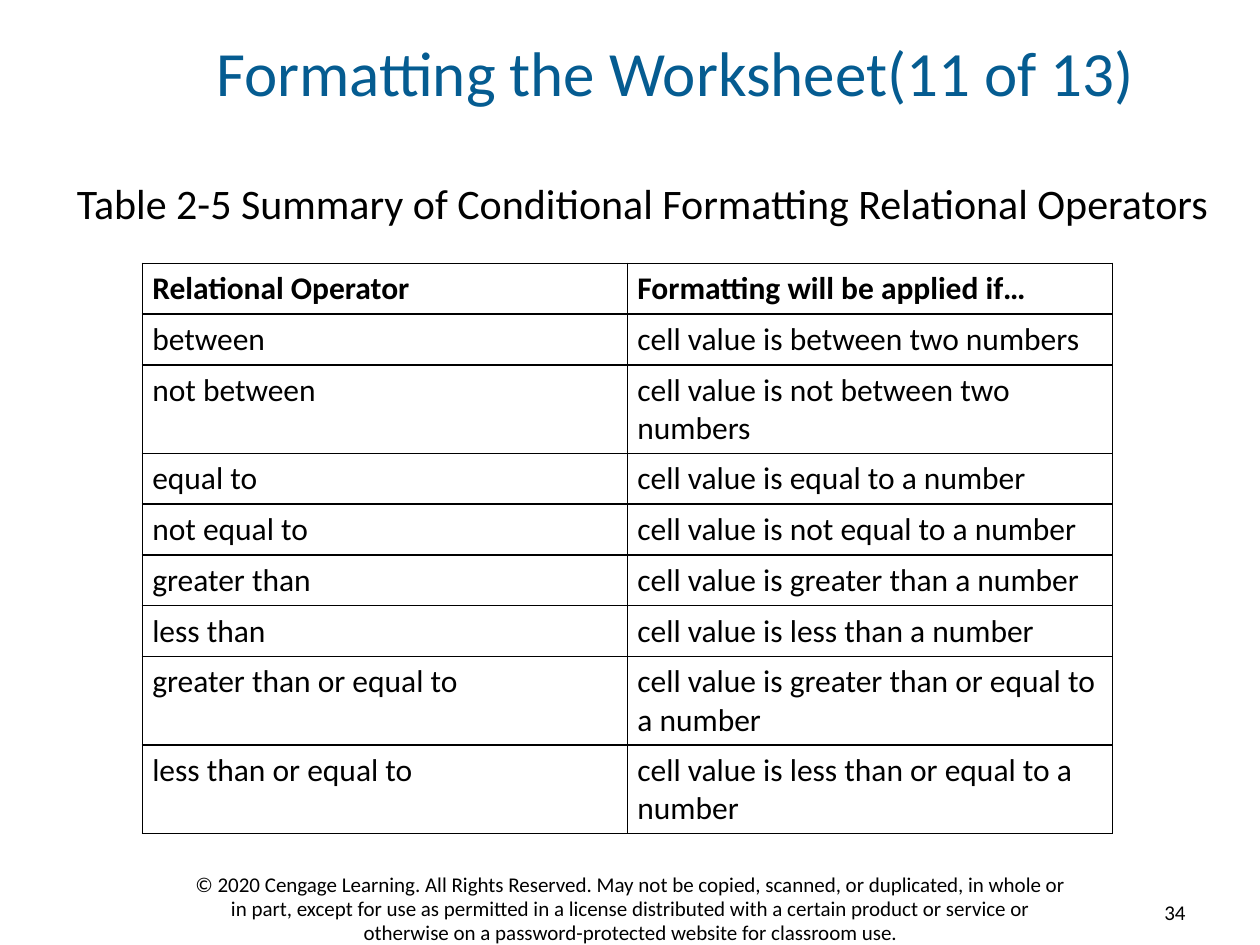
from lxml import etree
from pptx import Presentation
from pptx.dml.color import RGBColor
from pptx.enum.text import MSO_ANCHOR, PP_ALIGN
from pptx.oxml.ns import qn
from pptx.util import Cm, Pt

LEFT, MID, RIGHT = PP_ALIGN.LEFT, PP_ALIGN.CENTER, PP_ALIGN.RIGHT
TOP, CENTER = MSO_ANCHOR.TOP, MSO_ANCHOR.MIDDLE
FACE = "Calibri"
INK = {"title": "055C91", "text": "000000", "page": "FFFFFF"}

TITLE = "Formatting the Worksheet(11 of 13)"
LEAD = "Table 2-5 Summary of Conditional Formatting Relational Operators"
RIGHTS = (
    "© 2020 Cengage Learning. All Rights Reserved. May not be copied, scanned, "
    "or duplicated, in whole or in part, except for use as permitted in a license "
    "distributed with a certain product or service or otherwise on a "
    "password-protected website for classroom use."
)
HEAD = ("Relational Operator", "Formatting will be applied if…")
RULES = [
    ("between", "between two numbers"),
    ("not between", "not between two numbers"),
    ("equal to", "equal to a number"),
    ("not equal to", "not equal to a number"),
    ("greater than", "greater than a number"),
    ("less than", "less than a number"),
    ("greater than or equal to", "greater than or equal to a number"),
    ("less than or equal to", "less than or equal to a number"),
]


def style(para, size, ink="text", bold=False):
    """Set the font of a paragraph."""
    font = para.font
    font.name, font.size, font.bold = FACE, Pt(size), bold
    font.color.rgb = RGBColor.from_string(INK[ink])


def label(slide, box, text, size, ink="text", align=LEFT, anchor=TOP,
          space=1.0, pad=(0, 0), wrap=True):
    """Place one paragraph of text in a box given in centimetres."""
    frame = slide.shapes.add_textbox(*map(Cm, box)).text_frame
    frame.word_wrap, frame.vertical_anchor = wrap, anchor
    frame.margin_left = frame.margin_right = Cm(pad[0])
    frame.margin_top = frame.margin_bottom = Cm(pad[1])
    para = frame.paragraphs[0]
    para.text, para.alignment, para.line_spacing = text, align, space
    style(para, size, ink)


def frame_cell(cell):
    """Draw a thin line on every side of a cell."""
    props = cell._tc.get_or_add_tcPr()
    for side in ("lnL", "lnR", "lnT", "lnB"):
        line = etree.SubElement(props, qn(f"a:{side}"), w=str(Pt(1)))
        fill = etree.SubElement(line, qn("a:solidFill"))
        etree.SubElement(fill, qn("a:srgbClr"), val=INK["text"])


def fill_cell(cell, text, bold):
    """Write and style one table cell."""
    frame_cell(cell)
    cell.fill.solid()
    cell.fill.fore_color.rgb = RGBColor.from_string(INK["page"])
    cell.margin_left = cell.margin_right = Cm(0.2)
    cell.margin_top = cell.margin_bottom = Cm(0.13)
    cell.text = text
    style(cell.text_frame.paragraphs[0], 18, bold=bold)


def grid(slide, left, top, width):
    """Place the table of relational operators."""
    rows = [HEAD] + [(name, f"cell value is {rule}") for name, rule in RULES]
    high = Cm(1.02)
    table = slide.shapes.add_table(
        len(rows), 2, Cm(left), Cm(top), Cm(width), high * len(rows)).table
    for r, row in enumerate(rows):
        table.rows[r].height = Cm(1.75) if len(row[1]) > 46 else high
        for c, text in enumerate(row):
            fill_cell(table.cell(r, c), text, r == 0)


def footer(slide, left, top, width):
    """Place the rights line and the page number."""
    label(slide, (left, top, width, 1.52), RIGHTS, 12, align=MID,
          space=0.95, pad=(0.25, 0.13))
    label(slide, (left + 19.5, top + 0.53, 1.04, 0.76), "34", 12, align=RIGHT,
          anchor=CENTER, pad=(0.25, 0.13), wrap=False)


def main():
    """Build the slide and save it."""
    deck = Presentation()
    deck.slide_width, deck.slide_height = Cm(25.4), Cm(19.05)
    slide = deck.slides.add_slide(deck.slide_layouts[6])
    footer(slide, 3.61, 17.48, 18.21)
    label(slide, (2.11, 0.38, 23.01, 2.36), TITLE, 36, "title", MID, CENTER, 0.85)
    label(slide, (1.55, 3.66, 23.57, 1.22), LEAD, 24, space=0.95)
    grid(slide, 2.87, 5.31, 19.56)
    deck.save("out.pptx")


if __name__ == "__main__":
    main()
